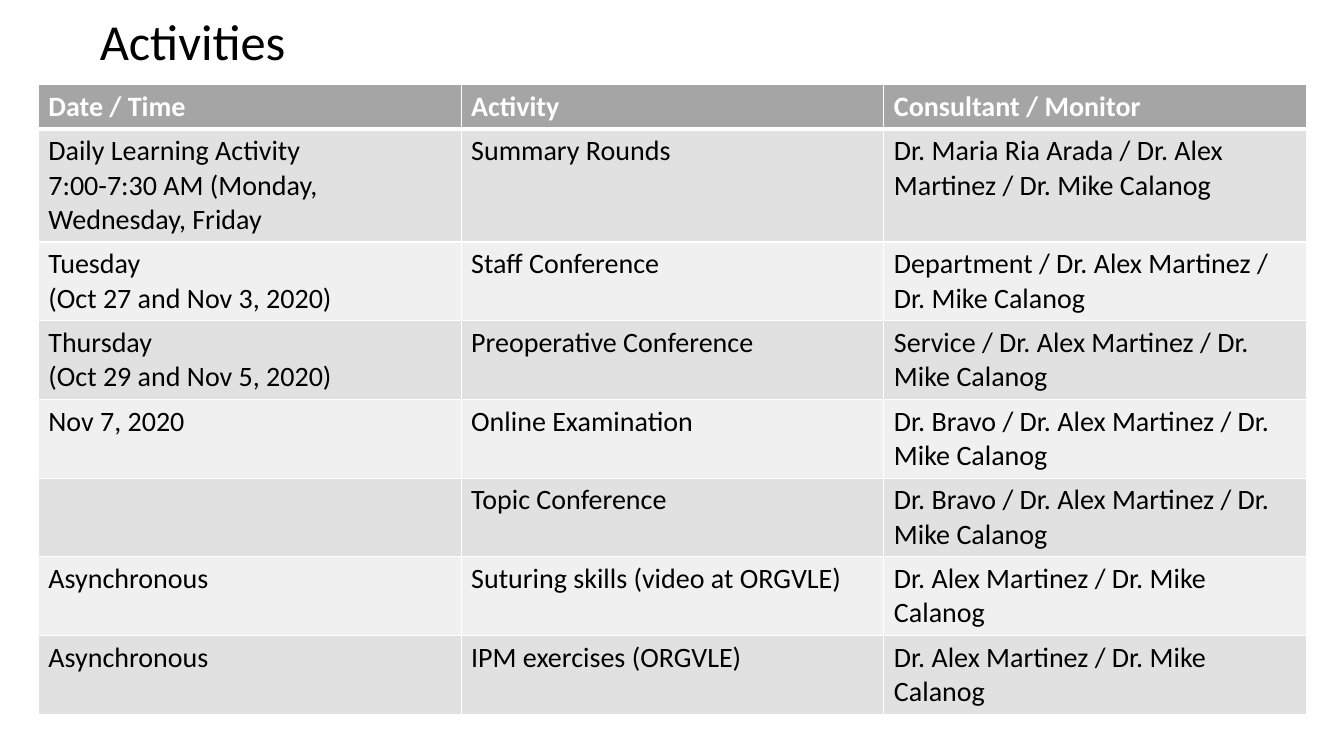
from lxml.etree import SubElement
from pptx import Presentation
from pptx.dml.color import RGBColor
from pptx.enum.text import MSO_ANCHOR
from pptx.oxml.ns import qn
from pptx.util import Inches, Pt

BLACK = RGBColor(0x00, 0x00, 0x00)
WHITE = RGBColor(0xFF, 0xFF, 0xFF)
HEADER_GREY = RGBColor(0xA5, 0xA5, 0xA5)
BAND_GREYS = (RGBColor(0xF0, 0xF0, 0xF0), RGBColor(0xE1, 0xE1, 0xE1))

TITLE_FONT = {"name": "Calibri", "size": Pt(36), "bold": False}
HEADER_FONT = {"name": "Calibri", "size": Pt(20), "bold": True}
BODY_FONT = {"name": "Calibri", "size": Pt(20), "bold": False}

MONITORS = "Dr. Alex Martinez / Dr. Mike Calanog"
SCHEDULE = [
    ("Date / Time", "Activity", "Consultant / Monitor"),
    ("Daily Learning Activity\n7:00-7:30 AM (Monday, Wednesday, Friday",
     "Summary Rounds", f"Dr. Maria Ria Arada / {MONITORS}"),
    ("Tuesday\n(Oct 27 and Nov 3, 2020)", "Staff Conference",
     f"Department / {MONITORS}"),
    ("Thursday\n(Oct 29 and Nov 5, 2020)", "Preoperative Conference",
     f"Service / {MONITORS}"),
    ("Nov 7, 2020", "Online Examination", f"Dr. Bravo / {MONITORS}"),
    ("", "Topic Conference", f"Dr. Bravo / {MONITORS}"),
    ("Asynchronous", "Suturing skills (video at ORGVLE)", MONITORS),
    ("Asynchronous", "IPM exercises (ORGVLE)", MONITORS),
]


def format_font(font, settings, color):
    for attribute, value in settings.items():
        setattr(font, attribute, value)
    font.color.rgb = color


def add_borders(cell, widths):
    """Draw white borders; widths maps each side (L, R, T, B) to points."""
    properties = cell._tc.get_or_add_tcPr()
    for side, width in widths.items():
        line = SubElement(properties, qn(f"a:ln{side}"), w=str(Pt(width)))
        fill = SubElement(line, qn("a:solidFill"))
        SubElement(fill, qn("a:srgbClr"), val=str(WHITE))


def fill_cell(cell, text, row):
    is_header = row == 0
    add_borders(cell, {"L": 1, "R": 1, "T": 3 if row == 1 else 1,
                       "B": 3 if is_header else 1})
    cell.fill.solid()
    cell.fill.fore_color.rgb = HEADER_GREY if is_header else BAND_GREYS[row % 2]
    cell.text = text
    for paragraph in cell.text_frame.paragraphs:
        format_font(paragraph.font, HEADER_FONT if is_header else BODY_FONT,
                    WHITE if is_header else BLACK)
        for run in paragraph.runs:
            format_font(run.font, HEADER_FONT if is_header else BODY_FONT,
                        WHITE if is_header else BLACK)


def set_title(slide, text):
    title = slide.shapes.title
    title.left, title.top = Inches(0.89), Inches(0.11)
    title.width, title.height = Inches(11.5), Inches(0.66)
    frame = title.text_frame
    frame.text = text
    frame.word_wrap = True
    frame.vertical_anchor = MSO_ANCHOR.MIDDLE
    heading = frame.paragraphs[0]
    heading.alignment = 1
    heading.line_spacing = 0.9
    format_font(heading.runs[0].font, TITLE_FONT, BLACK)


def add_schedule(slide, rows):
    holder = slide.shapes.add_table(len(rows), len(rows[0]), Inches(0.38),
                                    Inches(0.84), Inches(12.58), Inches(6.13))
    schedule = holder.table
    for table_row in schedule.rows:
        table_row.height = Inches(0.41)
    holder.height = Inches(6.13)
    for row, texts in enumerate(rows):
        for column, text in enumerate(texts):
            fill_cell(schedule.cell(row, column), text, row)


def main():
    deck = Presentation()
    deck.slide_width, deck.slide_height = Inches(13.33), Inches(7.5)
    slide = deck.slides.add_slide(deck.slide_layouts[5])
    set_title(slide, "Activities")
    add_schedule(slide, SCHEDULE)
    deck.save("out.pptx")


if __name__ == "__main__":
    main()
